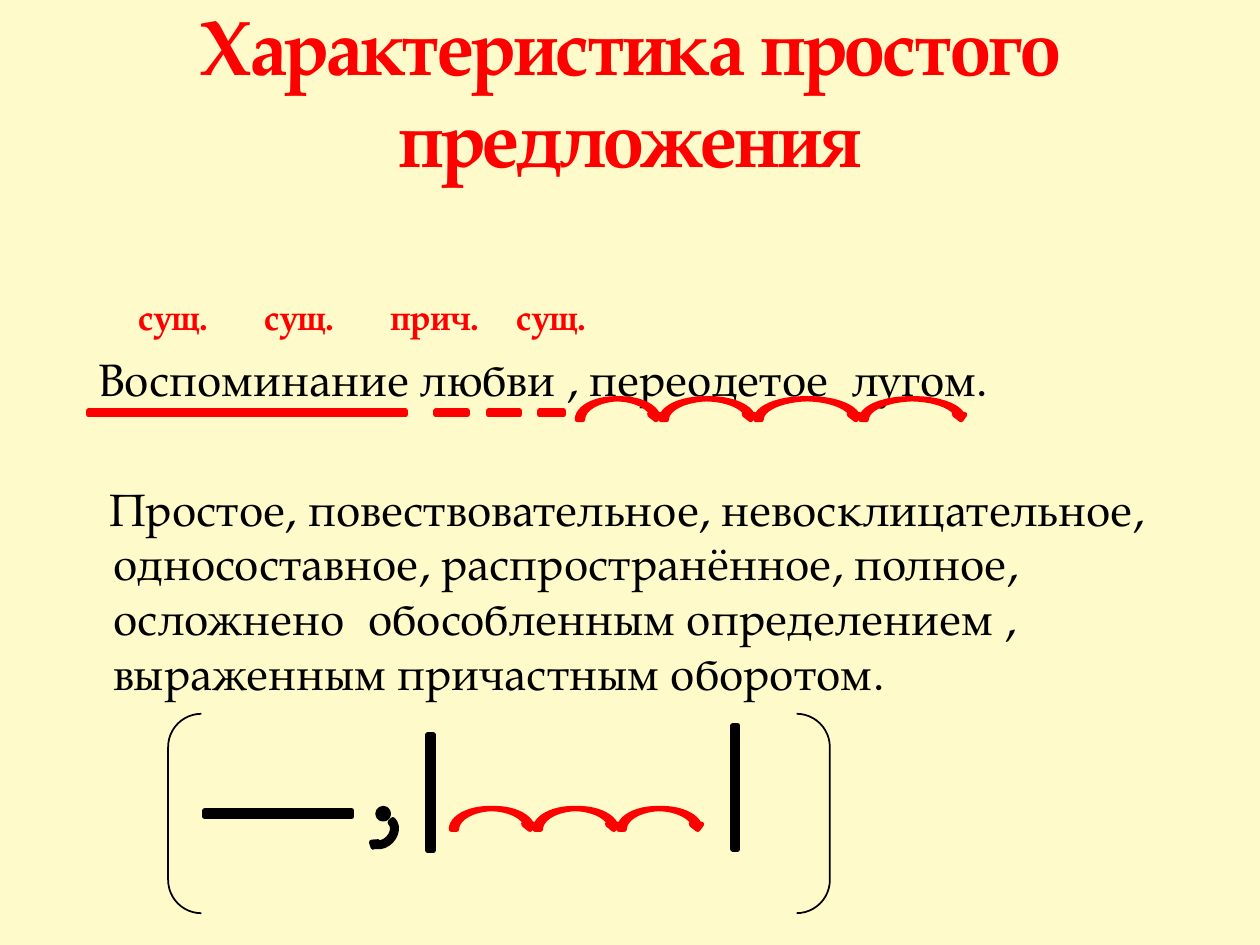
from dataclasses import dataclass
from itertools import accumulate
from pptx import Presentation
from pptx.dml.color import RGBColor
from pptx.enum.shapes import MSO_SHAPE
from pptx.enum.text import MSO_ANCHOR, PP_ALIGN
from pptx.oxml import parse_xml
from pptx.oxml.ns import nsdecls
from pptx.util import Cm, Pt


@dataclass(frozen=True)
class Theme:
    font: str = "TeX Gyre Pagella"
    back: str = "FEFAC9"
    red: str = "FF0000"
    black: str = "000000"
    green: str = "A5B592"
    head: int = 44
    body: int = 26
    label: int = 20
    line: int = 3
    thin: int = 1


theme = Theme()
WIDE = theme.body / 4

TITLE = "Характеристика простого предложения"
LABELS = [("сущ.", 2.74), ("сущ.", 8.03), ("прич.", 11.76), ("сущ.", 16.2)]
PHRASE = [("Воспоминание любви , переодетое", 0), (" ", WIDE), ("лугом.", 0)]
TRAITS = [
    ("Простое, повествовательное, невосклицательное, односоставное, "
     "распространённое, полное, осложнено", 0),
    (" ", WIDE),
    ("обособленным определением , выраженным причастным оборотом.", 0),
]
MARKS = [(0.64, 8.68), (8.68, 0.85), (9.74, 0.85), (10.8, 0.64)]
ARCS = [
    (11.64, 8.04, [1.69, 1.91, 2.12, 2.12]),
    (9.1, 16.3, [1.69] * 3),
]
WALLS = [(7.09, 15.77, 3.18), (13.13, 15.66, 3.39)]


def add_run(para, text, size, color, bold=False, gap=0):
    run = para.add_run()
    run.text = text
    font = run.font
    font.name, font.size, font.bold = theme.font, Pt(size), bold
    font.color.rgb = RGBColor.from_string(color)
    if gap:
        run._r.get_or_add_rPr().set("spc", str(round(gap * 100)))


def add_box(slide, left, top, width, height):
    frame = slide.shapes.add_textbox(Cm(left), Cm(top), Cm(width), Cm(height)).text_frame
    frame.word_wrap = True
    return frame


def indent(para, left, first, before=0):
    props = para._p.get_or_add_pPr()
    props.set("marL", str(Cm(left)))
    props.set("indent", str(Cm(first)))
    para.space_before = Pt(before)
    return props


def add_shape(slide, kind, left, top, width, height, fill, color, line=theme.line):
    shape = slide.shapes.add_shape(kind, Cm(left), Cm(top), Cm(width), Cm(height))
    shape.shadow.inherit = False
    if fill:
        shape.fill.solid()
        shape.fill.fore_color.rgb = RGBColor.from_string(fill)
    else:
        shape.fill.background()
    shape.line.color.rgb = RGBColor.from_string(color)
    shape.line.width = Pt(line)
    return shape


def add_text(slide):
    head = add_box(slide, 1.27, 0.43, 22.86, 3.38)
    head.vertical_anchor = MSO_ANCHOR.BOTTOM
    para = head.paragraphs[0]
    para.alignment = PP_ALIGN.CENTER
    add_run(para, TITLE, theme.head, theme.red, True, -1)

    body = add_box(slide, 1.27, 4.24, 22.86, 14.4)
    body.margin_top = Cm(1.71)
    para = body.paragraphs[0]
    stops = "".join(f'<a:tab pos="{Cm(spot)}" algn="l"/>' for _, spot in LABELS)
    tabs = parse_xml(f'<a:tabLst {nsdecls("a")}>{stops}</a:tabLst>')
    indent(para, 0, 0).append(tabs)
    for word, _ in LABELS:
        add_run(para, "\t" + word, theme.label, theme.red, True)
    for runs, left, first, before in [(PHRASE, 0.46, 0, 8), (TRAITS, 0.76, -0.08, 43)]:
        para = body.add_paragraph()
        indent(para, left, first, before)
        for text, gap in runs:
            add_run(para, text, theme.body, theme.black, gap=gap)


def add_marks(slide):
    for left, width in MARKS:
        add_shape(slide, MSO_SHAPE.MATH_EQUAL, left, 8.26, width, 0.13, theme.green, theme.red)
    for start, top, sizes in ARCS:
        for left, width in zip(accumulate(sizes, initial=start), sizes):
            add_shape(slide, MSO_SHAPE.CURVED_DOWN_ARROW, left, top, width, 0.42,
                      theme.green, theme.red)


def add_scheme(slide):
    add_shape(slide, MSO_SHAPE.DOUBLE_BRACKET, 3.39, 14.39, 13.34, 4.02,
              None, theme.black, theme.thin)
    add_shape(slide, MSO_SHAPE.MATH_EQUAL, 3.6, 16.3, 4.02, 0.21, theme.green, theme.black)
    add_shape(slide, MSO_SHAPE.FLOWCHART_CONNECTOR, 7.62, 16.3, 0.21, 0.21,
              theme.black, theme.black)
    tail = add_shape(slide, MSO_SHAPE.CIRCULAR_ARROW, 7.32, 16.46, 0.74, 0.61,
                     theme.green, theme.black)
    tail.rotation = 133.2
    for left, top, width in WALLS:
        wall = add_shape(slide, MSO_SHAPE.MATH_MINUS, left, top, width, 0.42,
                         theme.green, theme.black)
        wall.rotation = 270


def main():
    """Build the slide on the features of a simple sentence."""
    deck = Presentation()
    deck.slide_width, deck.slide_height = Cm(25.4), Cm(19.05)
    slide = deck.slides.add_slide(deck.slide_layouts[6])
    slide.background.fill.solid()
    slide.background.fill.fore_color.rgb = RGBColor.from_string(theme.back)
    add_text(slide)
    add_marks(slide)
    add_scheme(slide)
    deck.save("out.pptx")


if __name__ == "__main__":
    main()
